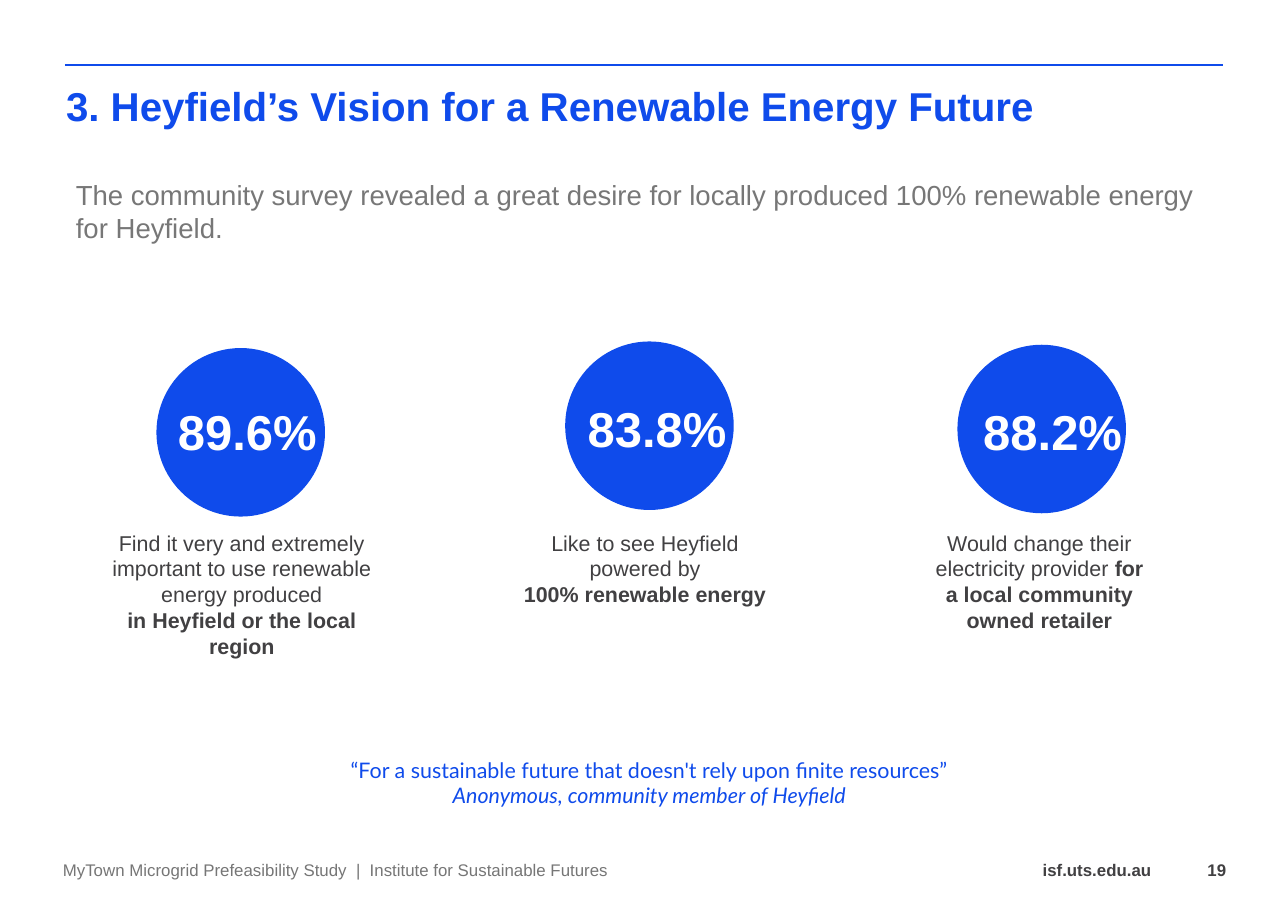
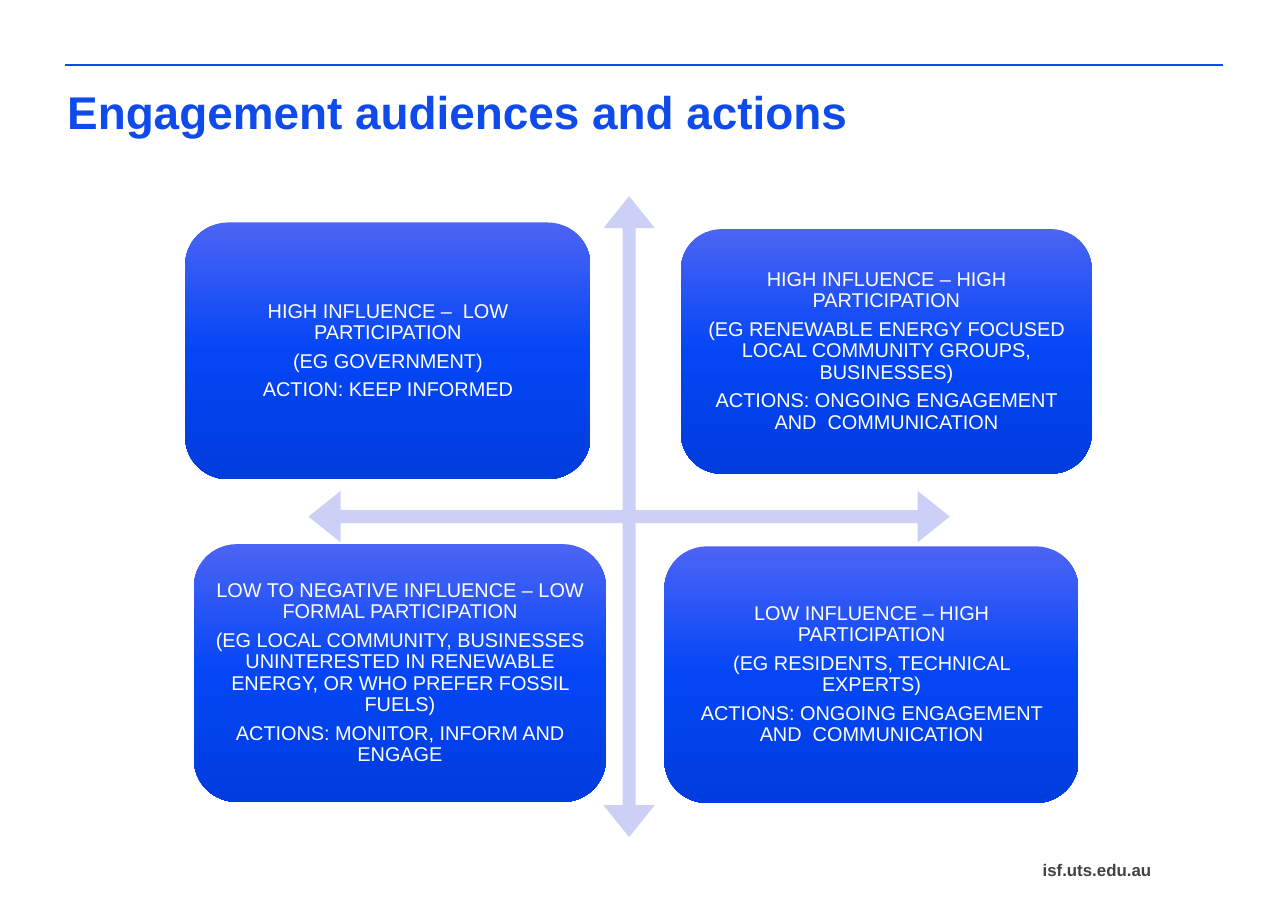
from lxml.etree import SubElement
from pptx import Presentation
from pptx.dml.color import RGBColor
from pptx.enum.shapes import MSO_CONNECTOR, MSO_SHAPE
from pptx.enum.text import MSO_ANCHOR, MSO_AUTO_SIZE, PP_ALIGN
from pptx.oxml.ns import qn
from pptx.util import Inches, Pt

COLORS = {
    "blue": "0F4BEB",
    "white": "FFFFFF",
    "dark": "414042",
    "grey": "777777",
    "footer": "767676",
    "arrow": "CCD0F7",
}
CARD_GRADIENT = [(0, "4B64F4"), (50, "0446F6"), (100, "003DDE")]

STYLES = {
    "title": {"size": 30, "bold": True, "color": "blue"},
    "lead": {"size": 18, "color": "grey"},
    "stat": {"size": 32, "bold": True, "color": "white"},
    "body": {"size": 14, "color": "dark"},
    "strong": {"size": 14, "bold": True, "color": "dark"},
    "quote": {"name": "Lato", "size": 14, "color": "blue"},
    "source": {"name": "Lato", "size": 14, "italic": True, "color": "blue"},
    "card": {"size": 13, "color": "white"},
    "footer": {"size": 11, "color": "footer"},
    "footer_bold": {"size": 11, "bold": True, "color": "dark"},
}

LEFT, RIGHT = 0.59, 11.1
NO_INSET = (0, 0, 0, 0)
TEXT_INSET = (0.1, 0.05, 0.1, 0.05)
TOP_INSET = (0, 0.01, 0, 0)
CARD_INSET = (0.05, 0.05, 0.05, 0.05)


def to_inches(box):
    return [Inches(length) for length in box]


def apply_style(span, style, **changes):
    values = {"name": "Arial", **STYLES[style], **changes}
    span.font.color.rgb = RGBColor.from_string(COLORS[values.pop("color")])
    values["size"] = Pt(values["size"])
    for attribute, value in values.items():
        setattr(span.font, attribute, value)


def set_frame(frame, inset, anchor=MSO_ANCHOR.TOP):
    left, top, right, bottom = to_inches(inset)
    settings = {
        "word_wrap": True, "auto_size": MSO_AUTO_SIZE.NONE, "vertical_anchor": anchor,
        "margin_left": left, "margin_top": top,
        "margin_right": right, "margin_bottom": bottom,
    }
    for attribute, value in settings.items():
        setattr(frame, attribute, value)


def write_paragraphs(frame, paragraphs, **para_format):
    """Each paragraph is a list of (text, style); None stands for a line break."""
    for index, parts in enumerate(paragraphs):
        para = frame.paragraphs[0] if index == 0 else frame.add_paragraph()
        for attribute, value in para_format.items():
            setattr(para, attribute, value)
        for part in parts:
            if part is None:
                para.add_line_break()
                continue
            text, style = part
            span = para.add_run()
            span.text = text
            apply_style(span, style)


def add_text(page, box, paragraphs, inset=TEXT_INSET, anchor=MSO_ANCHOR.TOP,
             align=PP_ALIGN.LEFT):
    frame = page.shapes.add_textbox(*to_inches(box)).text_frame
    set_frame(frame, inset, anchor)
    write_paragraphs(frame, paragraphs, alignment=align)


def add_shape(page, kind, box):
    shape = page.shapes.add_shape(kind, *to_inches(box))
    shape.shadow.inherit = False
    shape.line.fill.background()
    return shape


def fill_solid(shape, color):
    shape.fill.solid()
    shape.fill.fore_color.rgb = RGBColor.from_string(COLORS[color])


def fill_card_gradient(shape):
    shape.fill.gradient()
    shape.fill.gradient_angle = 270
    stops = shape.element.spPr.find(qn("a:gradFill")).find(qn("a:gsLst"))
    stops.clear()
    for position, color in CARD_GRADIENT:
        stop = SubElement(stops, qn("a:gs"), pos=str(position * 1000))
        SubElement(stop, qn("a:srgbClr"), val=color)


def add_page(deck, title, box, inset=NO_INSET, size=30, line_spacing=1.0):
    """Title-only slide with the top rule and the web address."""
    page = deck.slides.add_slide(deck.slide_layouts[5])
    rule = page.shapes.add_connector(
        MSO_CONNECTOR.STRAIGHT, *to_inches((LEFT, 0.59, RIGHT, 0.59)))
    rule.line.color.rgb = RGBColor.from_string(COLORS["blue"])
    rule.line.width = Pt(1.5)
    SubElement(rule.element.spPr, qn("a:effectLst"))
    add_text(page, (8.49, 7.74, 2.06, 0.31), [[("isf.uts.edu.au", "footer_bold")]],
             anchor=MSO_ANCHOR.MIDDLE, align=PP_ALIGN.RIGHT)

    heading = page.shapes.title
    heading.left, heading.top, heading.width, heading.height = to_inches(box)
    set_frame(heading.text_frame, inset)
    write_paragraphs(heading.text_frame, [[(title, "title")]],
                     alignment=PP_ALIGN.LEFT, line_spacing=line_spacing)
    heading.text_frame.paragraphs[0].runs[0].font.size = Pt(size)
    return page


def add_page_footer(page, number):
    add_text(page, (0.57, 7.74, 5.28, 0.31),
             [[("MyTown Microgrid Prefeasibility Study  |  Institute for Sustainable Futures",
                "footer")]], NO_INSET, MSO_ANCHOR.MIDDLE)
    add_text(page, (10.66, 7.74, 0.47, 0.31), [[(number, "footer_bold")]],
             NO_INSET, MSO_ANCHOR.MIDDLE, PP_ALIGN.RIGHT)


def add_statistic(page, circle_at, value_offset, value, caption_box, caption):
    """A circle with its value, placed by offset from the circle, and a caption."""
    left, top = circle_at
    offset_x, offset_y = value_offset
    circle = add_shape(page, MSO_SHAPE.OVAL, (left, top, 1.53, 1.53))
    fill_solid(circle, "blue")
    add_text(page, (left + offset_x, top + offset_y, 1.75, 0.64),
             [[(value, "stat")]], align=PP_ALIGN.CENTER)
    add_text(page, caption_box, [caption], TOP_INSET, align=PP_ALIGN.CENTER)


def add_quote(page, box, quote, source):
    add_text(page, box, [[(quote, "quote")], [(source, "source")]], align=PP_ALIGN.CENTER)


def add_card(page, box, lines):
    card = add_shape(page, MSO_SHAPE.ROUNDED_RECTANGLE, box)
    fill_card_gradient(card)
    set_frame(card.text_frame, CARD_INSET, MSO_ANCHOR.MIDDLE)
    write_paragraphs(card.text_frame, [[(line, "card")] for line in lines],
                     alignment=PP_ALIGN.CENTER, line_spacing=0.9, space_after=Pt(4.55))


def build_vision_page(deck):
    page = add_page(deck, "3. Heyfield’s Vision for a Renewable Energy Future",
                    (LEFT, 0.73, RIGHT - LEFT, 0.46), (0.01, 0.01, 0, 0), size=26.3)
    add_text(page, (LEFT, 1.57, RIGHT - LEFT, 0.79), [[
        ("The community survey revealed a great desire for locally produced "
         "100% renewable energy for Heyfield.", "lead")]])
    statistics = [
        ((1.42, 3.16), (-0.05, 0.44), "89.6%", (0.99, 4.8, 2.41, 1.43),
         [("Find it very and extremely important to use renewable energy produced", "body"),
          None, ("in Heyfield or the local region", "strong")]),
        ((5.13, 3.1), (-0.04, 0.47), "83.8%", (4.72, 4.8, 2.27, 1.18),
         [("Like to see Heyfield powered by", "body"),
          None, ("100% renewable energy", "strong")]),
        ((8.69, 3.13), (-0.01, 0.47), "88.2%", (8.45, 4.8, 1.97, 1.18),
         [("Would change their electricity provider ", "body"),
          ("for a local community owned retailer", "strong")]),
    ]
    for statistic in statistics:
        add_statistic(page, *statistic)
    add_quote(page, (2.51, 6.82, 6.77, 0.57),
              "“For a sustainable future that doesn't rely upon finite resources”",
              "Anonymous, community member of Heyfield")
    add_page_footer(page, "19")


def build_engagement_page(deck):
    page = add_page(deck, "Engagement audiences and actions",
                    (0.61, 0.82, 9.92, 0.96), line_spacing=0.9)
    axes = add_shape(page, MSO_SHAPE.QUAD_ARROW, (2.8, 1.78, 5.82, 5.82))
    fill_solid(axes, "arrow")
    for index, value in enumerate((0.02, 0.04, 0.05)):
        axes.adjustments[index] = value
    ongoing = "ACTIONS: ONGOING ENGAGEMENT AND  COMMUNICATION"
    cards = [
        ((6.18, 2.08, 3.73, 2.22),
         ["HIGH INFLUENCE – HIGH PARTICIPATION",
          "(EG RENEWABLE ENERGY FOCUSED LOCAL COMMUNITY GROUPS, BUSINESSES)", ongoing]),
        ((1.68, 2.02, 3.68, 2.33),
         ["HIGH INFLUENCE –  LOW PARTICIPATION", "(EG GOVERNMENT)",
          "ACTION: KEEP INFORMED"]),
        ((1.76, 4.94, 3.74, 2.34),
         ["LOW TO NEGATIVE INFLUENCE – LOW FORMAL PARTICIPATION",
          "(EG LOCAL COMMUNITY, BUSINESSES UNINTERESTED IN RENEWABLE ENERGY, "
          "OR WHO PREFER FOSSIL FUELS)", "ACTIONS: MONITOR, INFORM AND ENGAGE"]),
        ((6.03, 4.96, 3.76, 2.33),
         ["LOW INFLUENCE – HIGH PARTICIPATION", "(EG RESIDENTS, TECHNICAL EXPERTS)",
          ongoing]),
    ]
    for box, lines in cards:
        add_card(page, box, lines)


def main():
    deck = Presentation()
    deck.slide_width, deck.slide_height = Inches(11.69), Inches(8.27)
    build_vision_page(deck)
    build_engagement_page(deck)
    deck.save("out.pptx")


if __name__ == "__main__":
    main()
